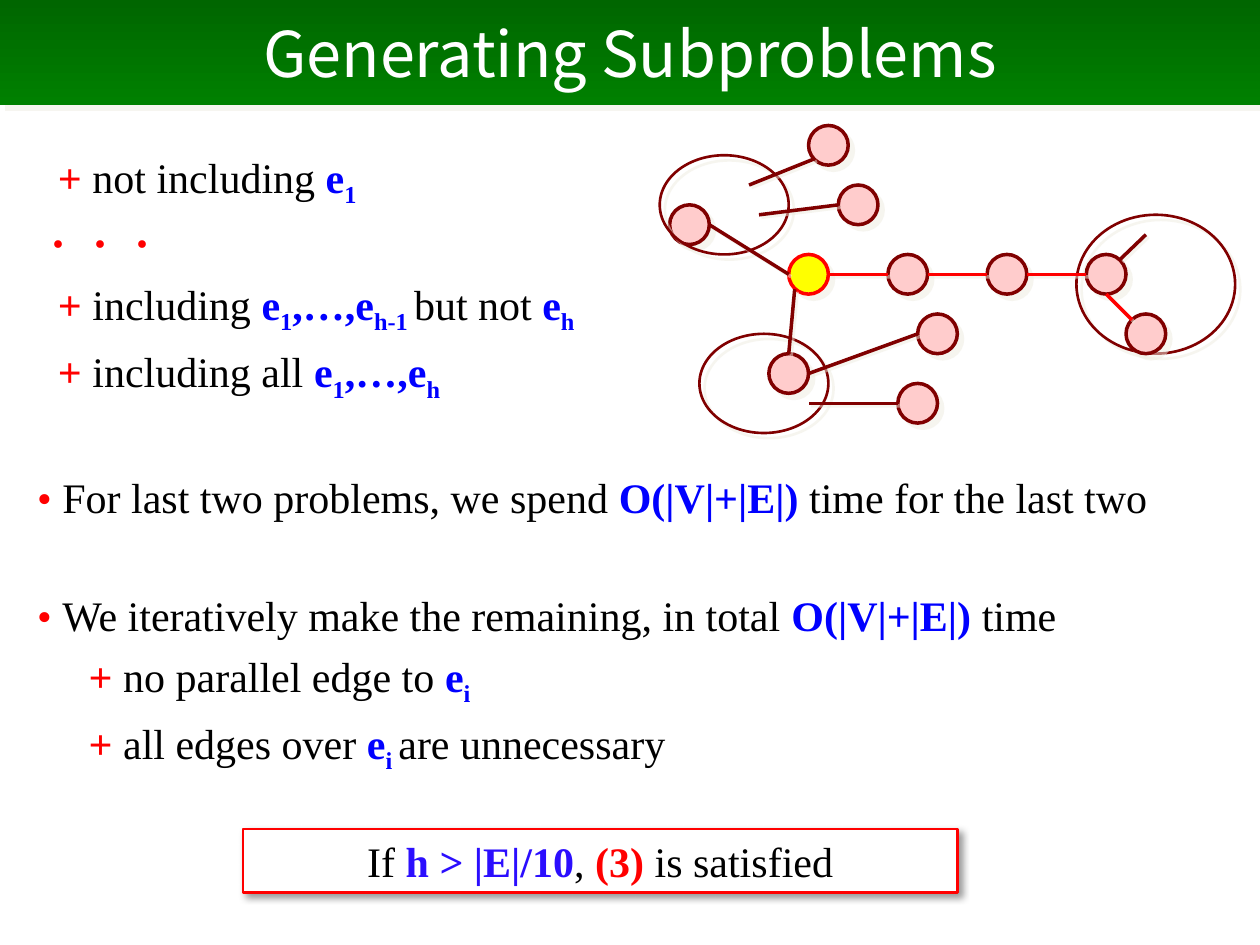
from lxml import etree
from pptx import Presentation
from pptx.dml.color import RGBColor
from pptx.enum.shapes import MSO_CONNECTOR, MSO_SHAPE
from pptx.enum.text import MSO_ANCHOR, PP_ALIGN
from pptx.oxml import parse_xml
from pptx.oxml.ns import nsdecls
from pptx.util import Cm, Pt

ELLIPSE, RECTANGLE = MSO_SHAPE.OVAL, MSO_SHAPE.RECTANGLE
STRAIGHT = MSO_CONNECTOR.STRAIGHT
CENTER, MIDDLE, TOP = PP_ALIGN.CENTER, MSO_ANCHOR.MIDDLE, MSO_ANCHOR.TOP

COLORS = {
    "dark green": "006600", "green": "008000", "white": "FFFFFF",
    "black": "000000", "red": "FF0000", "blue": "0000FF", "violet": "2B0EFE",
    "maroon": "800000", "pink": "FFCCCC", "yellow": "FFFF00", "cream": "EEECE1",
}
RGB = {name: RGBColor.from_string(value) for name, value in COLORS.items()}
NODE = 0.8  # node diameter in cm


def add_run(paragraph, text, color="black", bold=False, size=24,
            font="Times New Roman", baseline=0):
    run = paragraph.add_run()
    run.text = text
    run.font.size, run.font.bold, run.font.name = Pt(size), bold, font
    run.font.color.rgb = RGB[color]
    properties = run._r.get_or_add_rPr()
    if baseline:
        properties.set("baseline", str(baseline * 1000))
    east_asian = parse_xml(f'<a:ea {nsdecls("a")} typeface="{font}"/>')
    properties.find("{*}latin").addnext(east_asian)


def add_shadow(shape, distance, color="cream", opacity=50, blur=0):
    properties = shape._element.spPr
    for old in properties.findall("{*}effectLst"):
        properties.remove(old)
    effects = parse_xml(f'<a:effectLst {nsdecls("a")}/>')
    shadow = etree.SubElement(
        effects, effects.tag.replace("effectLst", "outerShdw"),
        blurRad=str(Pt(blur)), dist=str(Pt(distance)), dir="2700000",
        algn="ctr", rotWithShape="0")
    tint = etree.SubElement(shadow, shadow.tag.replace("outerShdw", "srgbClr"),
                            val=COLORS[color])
    etree.SubElement(tint, tint.tag.replace("srgbClr", "alpha"), val=str(opacity * 1000))
    properties.append(effects)


presentation = Presentation()
presentation.slide_width, presentation.slide_height = Cm(25.4), Cm(19.05)
slide = presentation.slides.add_slide(presentation.slide_layouts[5])
shapes = slide.shapes

# Title band
title = shapes.title
title.left, title.top, title.width, title.height = Cm(0), Cm(0), Cm(25.4), Cm(2.12)
title.fill.gradient()
title.fill.gradient_angle = 270
for stop, color, position in zip(title.fill.gradient_stops, ("dark green", "green"), (0, 1)):
    stop.color.rgb, stop.position = RGB[color], position
add_shadow(title, 4.2)
title.text_frame.vertical_anchor = MIDDLE
paragraph = title.text_frame.paragraphs[0]
paragraph.alignment = CENTER
add_run(paragraph, "Generating Subproblems", color="white", size=36, font="Noto Sans CJK JP")

# Body text: left indent in cm, space before in points, runs
RED = {"color": "red"}
PLUS = {"color": "red", "bold": True}
BLUE = {"color": "blue", "bold": True}
SUB = {**BLUE, "baseline": -25}
TIGHT, WIDE = 5.6, 39
body_lines = [
    (0.42, TIGHT, [("+ ", PLUS), ("not including ", {}), ("e", BLUE), ("1", SUB)]),
    (0, TIGHT, [("・・・", RED)]),
    (0.42, TIGHT, [("+ ", PLUS), ("including ", {}), ("e", BLUE), ("1", SUB), (",…,e", BLUE),
                   ("h-1 ", SUB), ("but not ", {}), ("e", BLUE), ("h", SUB)]),
    (0.42, TIGHT, [("+ ", PLUS), ("including all ", {}), ("e", BLUE), ("1", SUB),
                   (",…,e", BLUE), ("h", SUB)]),
    (0, WIDE, [("• ", RED), ("For last two problems, we spend ", {}), ("O(|V|+|E|)", BLUE),
               (" time for the last two", {})]),
    (0, WIDE, [("• ", RED), ("We iteratively make the remaining, in total ", {}),
               ("O(|V|+|E|)", BLUE), (" time", {})]),
    (1.04, TIGHT, [("+ ", PLUS), ("no parallel edge to ", {}), ("e", BLUE), ("i", SUB)]),
    (1.04, TIGHT, [("+ ", PLUS), ("all edges over ", {}), ("e", BLUE), ("i ", SUB),
                   ("are unnecessary", {})]),
]
body = shapes.add_textbox(Cm(0.5), Cm(2.92), Cm(24.2), Cm(12.6))
frame = body.text_frame
frame.word_wrap, frame.vertical_anchor = True, TOP
for number, (indent, space, runs) in enumerate(body_lines):
    paragraph = frame.add_paragraph() if number else frame.paragraphs[0]
    paragraph.space_before = Pt(space)
    paragraph._p.get_or_add_pPr().set("marL", str(Cm(indent)))
    for text, style in runs:
        add_run(paragraph, text, **style)

# Graph: nodes and the outlines of its parts, from back to front
pink_node = (NODE, NODE, "pink", "maroon", 2)
ellipses = [(x, y, *pink_node) for x, y in (
    (13.5, 4.13), (18.1, 7.73), (17.9, 5.13), (18.5, 6.33),
    (15.5, 7.13), (16.3, 2.53), (16.9, 3.73))]
ellipses.append((15.9, 5.13, NODE, NODE, "yellow", "red", 2))
ellipses += [(x, y, width, height, None, "maroon", 1.5) for x, y, width, height in (
    (13.3, 3.13, 2.6, 2), (21.7, 4.33, 3.2, 2.8), (14.1, 6.73, 2.6, 2))]
ellipses += [(x, y, *pink_node) for x, y in ((19.9, 5.13), (21.9, 5.13), (22.7, 6.33))]
for x, y, width, height, fill, line, weight in ellipses:
    ellipse = shapes.add_shape(ELLIPSE, Cm(x), Cm(y), Cm(width), Cm(height))
    if fill:
        ellipse.fill.solid()
        ellipse.fill.fore_color.rgb = RGB[fill]
    else:
        ellipse.fill.background()
    ellipse.line.color.rgb, ellipse.line.width = RGB[line], Pt(weight)
    add_shadow(ellipse, 4.2)

# Graph: edges, with the path e1 to eh in red
edges = [(x, 5.53, x + 1.2, 5.53, "red") for x in (16.7, 18.7, 20.7)]
edges += [
    (22.3, 5.93, 22.82, 6.45, "red"),
    (18.1, 8.13, 16.3, 8.13, "maroon"),
    (16.9, 4.13, 15.3, 4.33, "maroon"),
    (16.02, 5.83, 15.9, 7.13, "maroon"),
    (16.42, 3.2, 15.1, 3.73, "maroon"),
    (14.3, 4.53, 15.9, 5.53, "maroon"),
    (18.5, 6.73, 16.3, 7.53, "maroon"),
    (22.58, 5.23, 23.1, 4.73, "maroon"),
]
for *ends, color in edges:
    edge = shapes.add_connector(STRAIGHT, *map(Cm, ends))
    edge.line.color.rgb, edge.line.width = RGB[color], Pt(2)
    add_shadow(edge, 2)

# Conclusion box
box = shapes.add_shape(RECTANGLE, Cm(4.9), Cm(16.71), Cm(14.4), Cm(1.28))
box.fill.solid()
box.fill.fore_color.rgb = RGB["white"]
box.line.color.rgb, box.line.width = RGB["red"], Pt(1.5)
add_shadow(box, 3, color="black", opacity=40, blur=4)
box.text_frame.word_wrap, box.text_frame.vertical_anchor = True, TOP
paragraph = box.text_frame.paragraphs[0]
paragraph.alignment = CENTER
for text, color, bold in (("If ", "black", False), ("h > |E|/10", "violet", True),
                          (", ", "black", False), ("(3) ", "red", True),
                          ("is satisfied", "black", False)):
    add_run(paragraph, text, color=color, bold=bold)

presentation.save("out.pptx")
